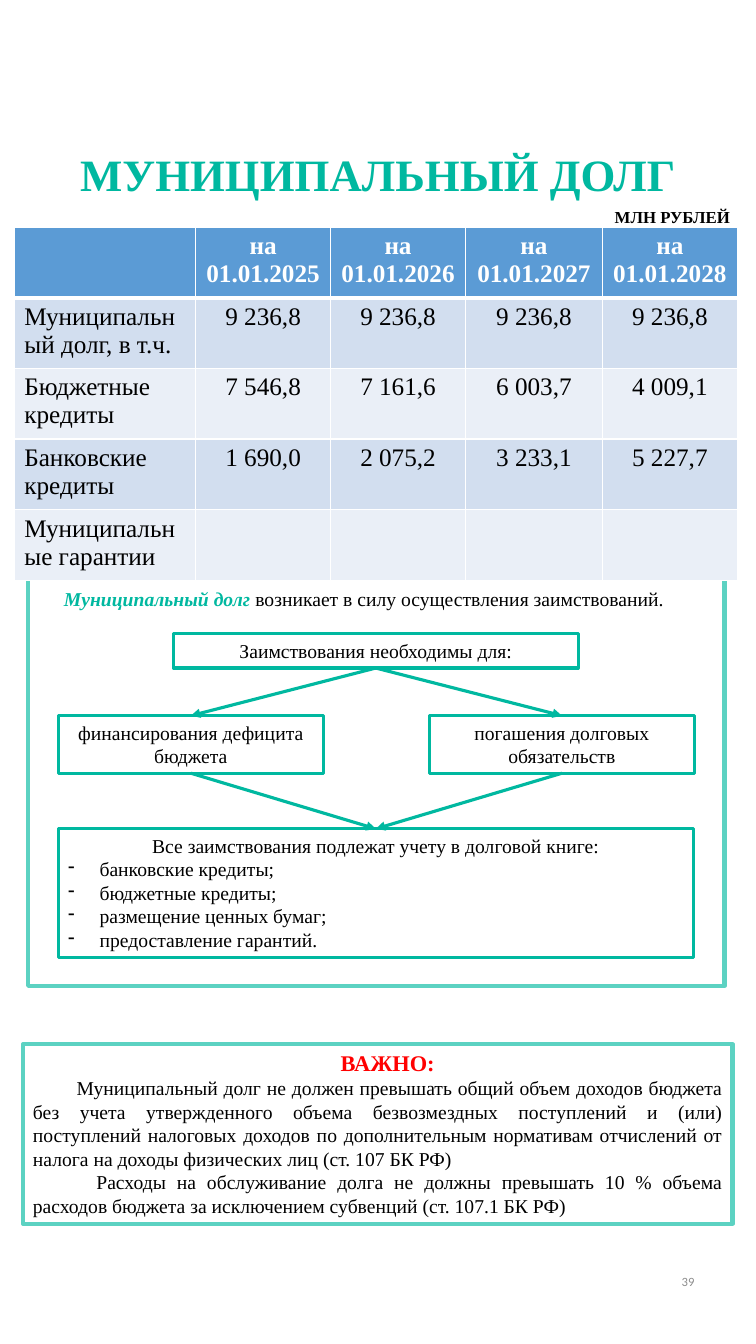
from dataclasses import dataclass

from lxml.etree import SubElement
from pptx import Presentation
from pptx.dml.color import RGBColor
from pptx.enum.shapes import MSO_CONNECTOR, MSO_SHAPE
from pptx.enum.text import MSO_ANCHOR, MSO_AUTO_SIZE, PP_ALIGN as Align
from pptx.oxml.ns import qn
from pptx.util import Cm, Pt


@dataclass(frozen=True)
class Theme:
    serif: str = "Times New Roman"
    sans: str = "Calibri"
    teal: str = "00B8A0"
    mint: str = "5CD2C2"
    red: str = "FF0000"
    black: str = "000000"
    white: str = "FFFFFF"
    gray: str = "8C8C8C"
    header: str = "5B9BD5"
    bands: tuple = ("D2DEEF", "EAEFF7")
    title: int = 32
    table: int = 18
    heading: int = 16
    body: int = 14
    units: int = 12
    number: int = 9
    frame_line: float = 3
    box_line: float = 2.25


THEME = Theme()


@dataclass(frozen=True)
class Box:
    left: float
    top: float
    width: float
    height: float

    def inner(self, left, top, width, height):
        return Box(self.left + left, self.top + top, width, height)

    def lengths(self):
        return Cm(self.left), Cm(self.top), Cm(self.width), Cm(self.height)


DEBT = [
    ["", "на 01.01.2025", "на 01.01.2026", "на 01.01.2027", "на 01.01.2028"],
    ["Муниципальный долг, в т.ч.", "9 236,8", "9 236,8", "9 236,8", "9 236,8"],
    ["Бюджетные кредиты", "7 546,8", "7 161,6", "6 003,7", "4 009,1"],
    ["Банковские кредиты", "1 690,0", "2 075,2", "3 233,1", "5 227,7"],
    ["Муниципальные гарантии", "", "", "", ""],
]
DEBT_COLUMNS = [4.57, 3.4, 3.4, 3.45, 3.4]
LOANS = ["банковские кредиты;", "бюджетные кредиты;",
         "размещение ценных бумаг;", "предоставление гарантий."]
LIMITS = [
    (1.1, "Муниципальный долг не должен превышать общий объем доходов бюджета "
          "без учета утвержденного объема безвозмездных поступлений и (или) "
          "поступлений налоговых доходов по дополнительным нормативам "
          "отчислений от налога на доходы физических лиц (ст. 107 БК РФ)"),
    (1.6, "Расходы на обслуживание долга не должны превышать 10 % объема "
          "расходов бюджета за исключением субвенций (ст. 107.1 БК РФ)"),
]


def color(value):
    return RGBColor.from_string(value)


def write(para, text, size=THEME.body, fill=THEME.black, font=THEME.serif,
          bold=False, italic=False, align=Align.LEFT, indent=0, bullet=None):
    """Append a formatted span to a paragraph; indents are in centimetres."""
    props = para._p.get_or_add_pPr()
    if bullet:
        props.set("marL", str(Cm(-indent)))
        SubElement(props, qn("a:buChar")).set("char", bullet)
    if indent:
        props.set("indent", str(Cm(indent)))
    para.alignment = align
    span = para.add_run()
    span.text = text
    span.font.name, span.font.size = font, Pt(size)
    span.font.bold, span.font.italic = bold, italic
    span.font.color.rgb = color(fill)


def add_label(page, box):
    frame = page.shapes.add_textbox(*box.lengths()).text_frame
    frame.word_wrap = True
    return frame


def add_frame(page, box, line, width):
    shape = page.shapes.add_shape(MSO_SHAPE.RECTANGLE, *box.lengths())
    shape.shadow.inherit = False
    shape.fill.background()
    shape.line.color.rgb = color(line)
    shape.line.width = Pt(width)
    shape.text_frame.word_wrap = True
    shape.text_frame.vertical_anchor = MSO_ANCHOR.TOP
    return shape


def add_step(page, box, text):
    shape = add_frame(page, box, THEME.teal, THEME.box_line)
    write(shape.text_frame.paragraphs[0], text, align=Align.CENTER)
    return shape


def add_arrow(page, upper, lower):
    """Arrow from the bottom of one step to the top of the next."""
    arrow = page.shapes.add_connector(MSO_CONNECTOR.STRAIGHT, 0, 0, 0, 0)
    arrow.begin_connect(upper, 2)
    arrow.end_connect(lower, 0)
    arrow.line.color.rgb = color(THEME.teal)
    arrow.line.width = Pt(THEME.box_line)
    SubElement(arrow.line._get_or_add_ln(), qn("a:tailEnd")).set("type", "triangle")
    SubElement(arrow._element.spPr, qn("a:effectLst"))


def add_borders(cell, bottom):
    props = cell._tc.get_or_add_tcPr()
    for side, width in (("L", 1), ("R", 1), ("T", 1), ("B", bottom)):
        line = SubElement(props, qn(f"a:ln{side}"), w=str(Pt(width)))
        SubElement(SubElement(line, qn("a:solidFill")), qn("a:srgbClr"), val=THEME.white)


def build_title(page, box):
    title = page.shapes.title
    title.left, title.top, title.width, title.height = box.lengths()
    frame = title.text_frame
    frame.auto_size = MSO_AUTO_SIZE.NONE
    frame.vertical_anchor = MSO_ANCHOR.TOP
    para = frame.paragraphs[0]
    para.line_spacing, para.space_after = 1.07, Pt(8)
    write(para, "МУНИЦИПАЛЬНЫЙ ДОЛГ", size=THEME.title, fill=THEME.teal,
          bold=True, align=Align.CENTER)


def build_debt_table(page, box):
    # Unit label above the right edge
    units = add_label(page, box.inner(14.88, -0.64, 3.81, 0.77))
    write(units.paragraphs[0], "МЛН РУБЛЕЙ", size=THEME.units, bold=True)

    table = page.shapes.add_table(len(DEBT), len(DEBT_COLUMNS), *box.lengths()).table
    for column, width in zip(table.columns, DEBT_COLUMNS):
        column.width = Cm(width)
    for row, values in enumerate(DEBT):
        is_header = row == 0
        for col, value in enumerate(values):
            cell = table.cell(row, col)
            add_borders(cell, 3 if row == 0 else 1)
            cell.fill.solid()
            cell.fill.fore_color.rgb = color(
                THEME.header if is_header else THEME.bands[(row - 1) % 2])
            if value:
                write(cell.text_frame.paragraphs[0], value, size=THEME.table,
                      fill=THEME.white if is_header else THEME.black,
                      bold=is_header, align=Align.CENTER if col else Align.LEFT)


def build_borrowing_scheme(page, box):
    add_frame(page, box, THEME.mint, THEME.frame_line)

    # Definition
    para = add_label(page, box.inner(0.15, 0.53, 17.2, 0.86)).paragraphs[0]
    write(para, "Муниципальный долг ", fill=THEME.teal, bold=True, italic=True,
          align=Align.JUSTIFY, indent=0.5)
    write(para, "возникает в силу осуществления заимствований.", align=Align.JUSTIFY)

    # Steps
    need = add_step(page, box.inner(3.66, 1.85, 10.2, 0.86), "Заимствования необходимы для:")
    purposes = [add_step(page, box.inner(left, 3.91, 6.68, 1.45), text)
                for left, text in ((0.76, "финансирования дефицита бюджета"),
                                   (10.11, "погашения долговых обязательств"))]
    ledger = add_step(page, box.inner(0.76, 6.76, 16, 3.25),
                      "Все заимствования подлежат учету в долговой книге:")
    for loan in LOANS:
        write(ledger.text_frame.add_paragraph(), loan, indent=-0.79, bullet="-")

    # Arrows
    for purpose in purposes:
        add_arrow(page, need, purpose)
        add_arrow(page, purpose, ledger)


def build_limits_note(page, box):
    frame = add_frame(page, box, THEME.mint, THEME.frame_line).text_frame
    write(frame.paragraphs[0], "ВАЖНО:", size=THEME.heading, fill=THEME.red,
          bold=True, align=Align.CENTER, indent=0.5)
    for indent, text in LIMITS:
        write(frame.add_paragraph(), text, align=Align.JUSTIFY, indent=indent)


def build_page_number(page, box):
    frame = add_label(page, box)
    frame.vertical_anchor = MSO_ANCHOR.MIDDLE
    write(frame.paragraphs[0], "39", size=THEME.number, fill=THEME.gray,
          font=THEME.sans, align=Align.RIGHT)


def main():
    deck = Presentation()
    deck.slide_width, deck.slide_height = Cm(19.05), Cm(33.86)
    page = deck.slides.add_slide(deck.slide_layouts[5])
    build_title(page, Box(0, 3.48, 19.05, 1.63))
    build_borrowing_scheme(page, Box(0.71, 14.12, 17.55, 10.72))
    build_debt_table(page, Box(0.36, 5.72, 18.22, 8.9))
    build_limits_note(page, Box(0.58, 26.31, 17.88, 4.52))
    build_page_number(page, Box(13.46, 31.39, 4.29, 1.8))
    deck.save("out.pptx")


if __name__ == "__main__":
    main()
